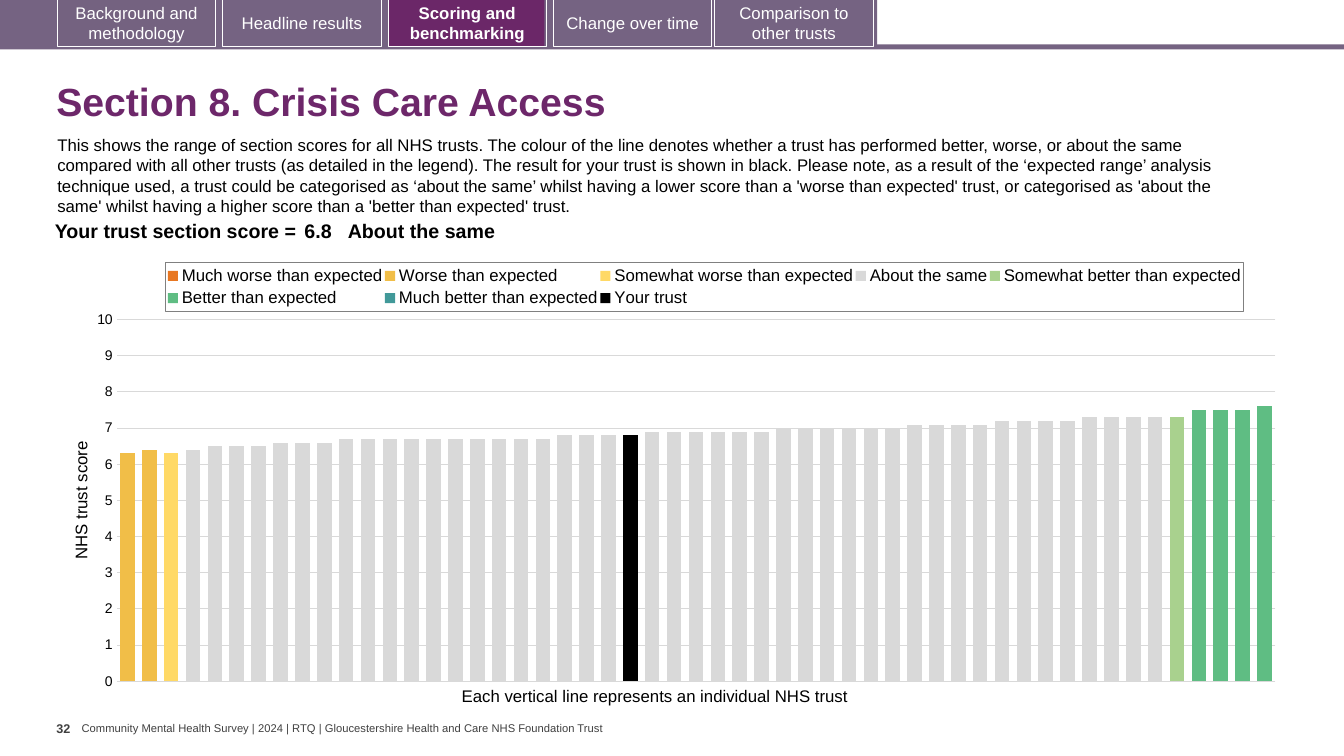
from copy import deepcopy
from typing import NamedTuple

from lxml.etree import SubElement
from pptx import Presentation
from pptx.chart.data import CategoryChartData
from pptx.dml.color import RGBColor
from pptx.enum.chart import XL_CHART_TYPE, XL_LEGEND_POSITION, XL_TICK_LABEL_POSITION, XL_TICK_MARK
from pptx.enum.shapes import MSO_SHAPE
from pptx.enum.text import MSO_ANCHOR, PP_ALIGN
from pptx.oxml import parse_xml
from pptx.oxml.ns import nsdecls, qn
from pptx.util import Inches, Pt

BLACK = RGBColor(0x00, 0x00, 0x00)
WHITE = RGBColor(0xFF, 0xFF, 0xFF)
DARK_GREY = RGBColor(0x40, 0x40, 0x40)
BORDER_GREY = RGBColor(0x80, 0x80, 0x80)
GRID_GREY = RGBColor(0xD9, 0xD9, 0xD9)
TITLE_PURPLE = RGBColor(0x6D, 0x27, 0x6A)
ACTIVE_PURPLE = RGBColor(0x6B, 0x27, 0x68)
BAND_PURPLE = RGBColor(0x75, 0x63, 0x82)
TAB_PURPLE = RGBColor(0x74, 0x62, 0x80)

INTRO = (
    "This shows the range of section scores for all NHS trusts. The colour of the line denotes "
    "whether a trust has performed better, worse, or about the same compared with all other trusts "
    "(as detailed in the legend). The result for your trust is shown in black. Please note, as a "
    "result of the ‘expected range’ analysis technique used, a trust could be categorised as "
    "‘about the same’ whilst having a lower score than a 'worse than expected' trust, or categorised "
    "as 'about the same' whilst having a higher score than a 'better than expected' trust."
)
TABS = [
    (0, "Background and methodology", TAB_PURPLE),
    (1.64, "Headline results", None),
    (3.28, "Scoring and benchmarking", None),
    (4.92, "Change over time", BAND_PURPLE),
    (6.52, "Comparison to other trusts", BAND_PURPLE),
]
ACTIVE_TAB = "Scoring and benchmarking"

TRUST_COUNT = 53
SAME_SCORES = (
    [6.4] + [6.5] * 3 + [6.6] * 3 + [6.7] * 10 + [6.8] * 4 + [6.9] * 6
    + [7.0] * 6 + [7.1] * 4 + [7.2] * 4 + [7.3] * 4
)
SERIES = [
    ("Much worse than expected", 0, [], RGBColor(0xE8, 0x77, 0x22)),
    ("Worse than expected", 0, [6.3, 6.4], RGBColor(0xF1, 0xBE, 0x48)),
    ("Somewhat worse than expected", 2, [6.3], RGBColor(0xFF, 0xD9, 0x66)),
    ("About the same", 3, SAME_SCORES, GRID_GREY),
    ("Somewhat better than expected", 48, [7.3], RGBColor(0xA9, 0xD1, 0x8E)),
    ("Better than expected", 49, [7.5, 7.5, 7.5, 7.6], RGBColor(0x5F, 0xBD, 0x83)),
    ("Much better than expected", 0, [], RGBColor(0x41, 0x99, 0x99)),
    ("Your trust", 23, [6.8], BLACK),
]


class Box(NamedTuple):
    """Hold a position and size in inches."""

    left: float
    top: float
    width: float
    height: float

    def lengths(self):
        """Return the four measures as lengths."""
        return [Inches(measure) for measure in self]


def style_font(font, size, color=BLACK, bold=False):
    """Set face, size, colour and weight."""
    font.name, font.size, font.bold = "Arial", Pt(size), bold
    font.color.rgb = color


def add_span(para, words, size, color=BLACK, bold=False):
    """Add one styled run to a paragraph."""
    span = para.add_run()
    span.text = words
    style_font(span.font, size, color, bold)


def add_text(page, box, words, size, color=BLACK, bold=False, wrap=True,
             insets=(0.1, 0.05), anchor=MSO_ANCHOR.TOP):
    """Add a text box holding one run and return its paragraph."""
    frame = page.shapes.add_textbox(*box.lengths()).text_frame
    frame.word_wrap, frame.vertical_anchor = wrap, anchor
    frame.margin_left = frame.margin_right = Inches(insets[0])
    frame.margin_top = frame.margin_bottom = Inches(insets[1])
    para = frame.paragraphs[0]
    add_span(para, words, size, color, bold)
    return para


def add_panel(page, box, fill=None, line=None):
    """Add a flat rectangle."""
    panel = page.shapes.add_shape(MSO_SHAPE.RECTANGLE, *box.lengths())
    panel.shadow.inherit = False
    if fill is None:
        panel.fill.background()
    else:
        panel.fill.solid()
        panel.fill.fore_color.rgb = fill
    if line is None:
        panel.line.fill.background()
    else:
        panel.line.color.rgb, panel.line.width = line, Pt(0.75)
    return panel


def add_navigation(page, box):
    """Draw the band across the top and its section tabs."""
    left, top = box.left + 0.57, box.top - 0.01
    add_panel(page, Box(box.left, box.top + 0.44, box.width, 0.05), BAND_PURPLE)
    add_panel(page, Box(box.left, box.top, 8.7, 0.47), BAND_PURPLE)
    add_panel(page, Box(left + 0.02, box.top, 1.54, 0.46), TAB_PURPLE)
    add_panel(page, Box(left + 3.29, box.top, 1.54, 0.46), ACTIVE_PURPLE)
    for offset, label, fill in TABS:
        tab = add_panel(page, Box(left + offset, top, 1.57, 0.47), fill, WHITE)
        frame = tab.text_frame
        frame.word_wrap, frame.vertical_anchor = True, MSO_ANCHOR.MIDDLE
        frame.paragraphs[0].alignment = PP_ALIGN.CENTER
        add_span(frame.paragraphs[0], label, 12, WHITE, label == ACTIVE_TAB)


def add_heading(page, box):
    """Write the section title and its introduction."""
    title = add_text(page, Box(box.left, box.top, box.width, 0.72), "Section 8. Crisis Care Access",
                     28, TITLE_PURPLE, True, anchor=MSO_ANCHOR.MIDDLE)
    title.line_spacing = 0.9
    add_text(page, Box(box.left + 0.01, box.top + 0.62, 12.13, 0.91), INTRO, 12)


def add_score(page, box):
    """Add the one-row table with the trust's own score."""
    table = page.shapes.add_table(1, 3, *box.lengths()).table
    table.first_row = table.horz_banding = False
    columns = [
        (2.63, "Your trust section score =", PP_ALIGN.RIGHT, 0.04),
        (0.47, "6.8", PP_ALIGN.LEFT, 0.04),
        (box.width - 3.1, "About the same", PP_ALIGN.LEFT, 0),
    ]
    for index, (width, words, alignment, inset) in enumerate(columns):
        table.columns[index].width = Inches(width)
        cell = table.cell(0, index)
        cell.fill.background()
        cell.margin_left = cell.margin_right = Inches(inset)
        cell.margin_top = cell.margin_bottom = Inches(0.04)
        para = cell.text_frame.paragraphs[0]
        para.alignment = alignment
        add_span(para, words, 14, bold=True)


def make_layout(left, top, width, height, inner=False):
    """Build a manual layout in fractions of the chart."""
    target = '<c:layoutTarget val="inner"/>' if inner else ""
    return parse_xml(
        f'<c:layout {nsdecls("c")}><c:manualLayout>{target}<c:xMode val="edge"/><c:yMode val="edge"/>'
        f'<c:x val="{left}"/><c:y val="{top}"/><c:w val="{width}"/><c:h val="{height}"/>'
        "</c:manualLayout></c:layout>")


def move_last_series_right(plot_area):
    """Move the last series to a second pair of axes."""
    bars = plot_area.find(qn("c:barChart"))
    right_bars = deepcopy(bars)
    bars.remove(bars.findall(qn("c:ser"))[-1])
    for series in right_bars.findall(qn("c:ser"))[:-1]:
        right_bars.remove(series)
    bars.addnext(right_bars)
    category, value = (plot_area.find(qn(tag)) for tag in ("c:catAx", "c:valAx"))
    right_category, right_value = deepcopy(category), deepcopy(value)
    value.addnext(right_value)
    right_value.addnext(right_category)
    new_ids = {category.find(qn("c:axId")).get("val"): "5001", value.find(qn("c:axId")).get("val"): "5002"}
    for part in (right_bars, right_category, right_value):
        for tag in ("c:axId", "c:crossAx"):
            for mark in part.findall(qn(tag)):
                mark.set("val", new_ids[mark.get("val")])
    for tag in ("c:majorGridlines", "c:title"):
        right_value.remove(right_value.find(qn(tag)))
    for tag, setting in (("c:axPos", "r"), ("c:tickLblPos", "none"), ("c:crosses", "max")):
        right_value.find(qn(tag)).set("val", setting)


def add_score_chart(page, box):
    """Chart every trust's score with its legend and caption."""
    scores = CategoryChartData()
    scores.categories = [str(number) for number in range(1, TRUST_COUNT + 1)]
    for name, start, values, color in SERIES:
        scores.add_series(name, [None] * start + values + [None] * (TRUST_COUNT - start - len(values)))
    chart = page.shapes.add_chart(XL_CHART_TYPE.COLUMN_CLUSTERED, *box.lengths(), scores).chart
    style_font(chart.font, 10)
    chart.has_title = False
    plot = chart.plots[0]
    plot.gap_width, plot.overlap, plot.vary_by_categories = 50, 100, False
    for series, (name, start, values, color) in zip(plot.series, SERIES):
        series.format.fill.solid()
        series.format.fill.fore_color.rgb = color
    chart.category_axis.visible = False
    axis = chart.value_axis
    axis.minimum_scale, axis.maximum_scale, axis.major_unit = 0, 10, 1
    axis.major_tick_mark = XL_TICK_MARK.NONE
    axis.tick_label_position = XL_TICK_LABEL_POSITION.NEXT_TO_AXIS
    axis.tick_labels.number_format, axis.tick_labels.number_format_is_linked = "0", False
    style_font(axis.tick_labels.font, 10)
    axis.format.line.fill.background()
    axis.major_gridlines.format.line.color.rgb = GRID_GREY
    axis.major_gridlines.format.line.width = Pt(0.75)
    title = axis.axis_title.text_frame
    add_span(title.paragraphs[0], "NHS trust score", 12)
    title._txBody.bodyPr.set("rot", "-5400000")
    title._txBody.bodyPr.set("vert", "horz")

    chart.has_legend = True
    legend = chart.legend
    legend.position, legend.include_in_layout = XL_LEGEND_POSITION.TOP, False
    style_font(legend.font, 12)
    frame = legend._element
    for old in frame.findall(qn("c:layout")):
        frame.remove(old)
    frame.find(qn("c:legendPos")).addnext(make_layout(0.08, 0.03, 0.88, 0.11))
    border = parse_xml(f'<c:spPr {nsdecls("c", "a")}><a:noFill/></c:spPr>')
    line = SubElement(border, qn("a:ln"), w=str(Pt(0.75)))
    SubElement(SubElement(line, qn("a:solidFill")), qn("a:srgbClr"), val=str(BORDER_GREY))
    frame.find(qn("c:txPr")).addprevious(border)

    plot_area = chart._chartSpace.chart.plotArea
    for old in plot_area.findall(qn("c:layout")):
        plot_area.remove(old)
    plot_area.insert(0, make_layout(0.04, 0.158, 0.946, 0.808, inner=True))
    move_last_series_right(plot_area)
    add_text(page, Box(box.left + 3.81, box.top + 4.28, 4.11, 0.3),
             "Each vertical line represents an individual NHS trust", 12, wrap=False)


def add_footer(page, box):
    """Write the page number and the survey name."""
    add_text(page, Box(box.left, box.top, 0.25, box.height), "32", 9, DARK_GREY, True, False, (0, 0.05))
    add_text(page, Box(box.left + 0.25, box.top + 0.06, 5.24, 0.13),
             "Community Mental Health Survey | 2024 | RTQ | Gloucestershire Health and Care NHS Foundation Trust",
             8, DARK_GREY, wrap=False, insets=(0, 0), anchor=MSO_ANCHOR.MIDDLE)


def main():
    """Build and save the slide."""
    deck = Presentation()
    deck.slide_width, deck.slide_height = Inches(13.33), Inches(7.5)
    page = deck.slides.add_slide(deck.slide_layouts[6])
    add_navigation(page, Box(0, 0, 13.33, 0.49))
    add_heading(page, Box(0.46, 0.67, 12.49, 1.53))
    add_score_chart(page, Box(0.67, 2.47, 12.15, 4.44))
    add_score(page, Box(0.35, 2.15, 11.7, 0.31))
    add_footer(page, Box(0.56, 7.1, 5.49, 0.4))
    deck.save("out.pptx")


if __name__ == "__main__":
    main()
